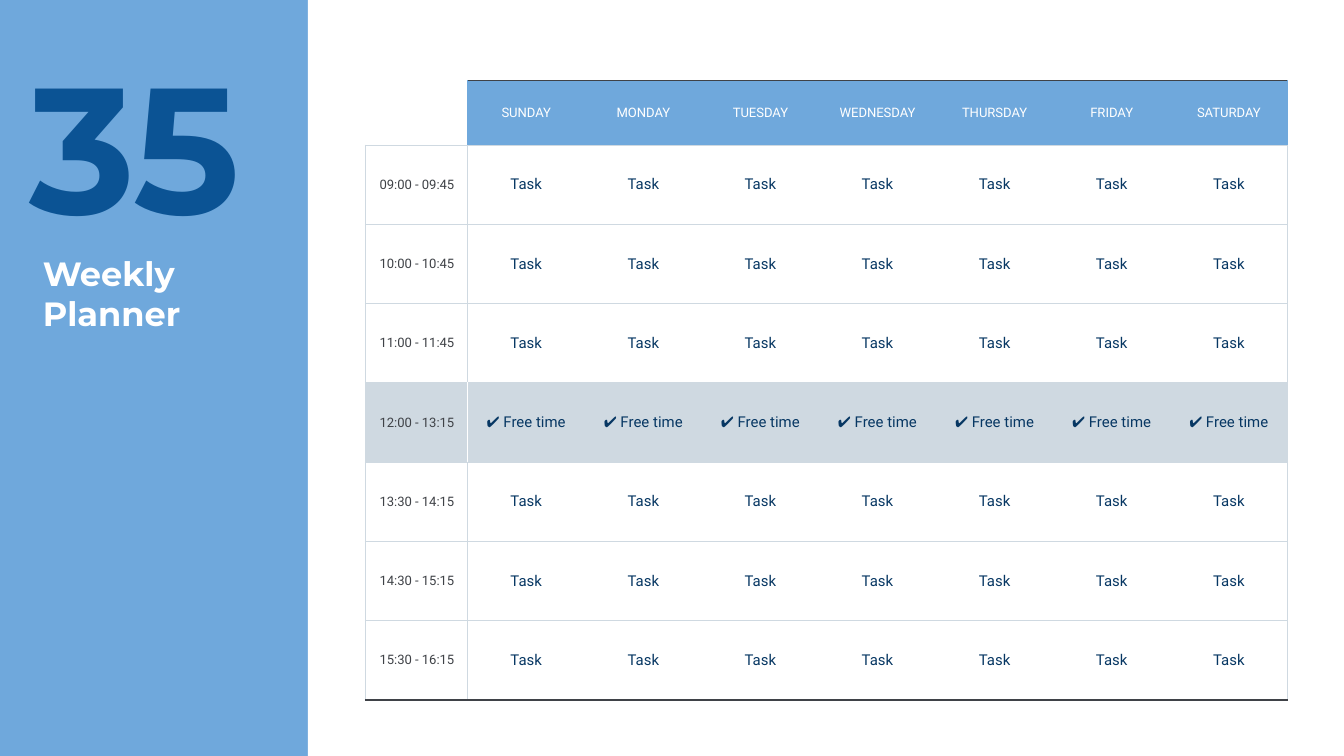
from dataclasses import dataclass

from lxml.etree import SubElement
from pptx import Presentation
from pptx.dml.color import RGBColor
from pptx.enum.shapes import MSO_SHAPE
from pptx.enum.text import MSO_ANCHOR, PP_ALIGN
from pptx.oxml.ns import qn
from pptx.util import Inches, Pt


@dataclass(frozen=True)
class Theme:
    sky: str = "6FA8DC"
    blue: str = "0B5394"
    navy: str = "073763"
    mist: str = "CFD9E1"
    charcoal: str = "3F4247"
    white: str = "FFFFFF"
    heading_font: str = "Montserrat"
    body_font: str = "Roboto"
    number_size: int = 96
    title_size: int = 18
    label_size: int = 7
    task_size: int = 8
    border_width: float = 0.75


THEME = Theme()
DAYS = ["SUNDAY", "MONDAY", "TUESDAY", "WEDNESDAY", "THURSDAY", "FRIDAY", "SATURDAY"]
TIMES = [
    "09:00 - 09:45",
    "10:00 - 10:45",
    "11:00 - 11:45",
    "12:00 - 13:15",
    "13:30 - 14:15",
    "14:30 - 15:15",
    "15:30 - 16:15",
]
BREAK_TIME = "12:00 - 13:15"
MARGIN = Inches(0.1)


def style_font(font, name, size, color, bold=False):
    font.name = name
    font.size = Pt(size)
    font.bold = bold
    font.color.rgb = RGBColor.from_string(color)


def add_panel(slide, left, width, height, color):
    shape = slide.shapes.add_shape(MSO_SHAPE.RECTANGLE, left, 0, width, height)
    shape.shadow.inherit = False
    shape.fill.solid()
    shape.fill.fore_color.rgb = RGBColor.from_string(color)
    shape.line.fill.background()


def add_heading(slide, text, left, top, width, height, size, color):
    frame = slide.shapes.add_textbox(left, top, width, height).text_frame
    frame.word_wrap = True
    frame.margin_left = frame.margin_right = MARGIN
    frame.margin_top = frame.margin_bottom = MARGIN
    paragraph = frame.paragraphs[0]
    paragraph.text = text
    style_font(paragraph.font, THEME.heading_font, size, color, bold=True)


def write_cell(cell, text, size, color, alignment=PP_ALIGN.CENTER):
    cell.text = text
    cell.vertical_anchor = MSO_ANCHOR.MIDDLE
    cell.margin_right = cell.margin_top = cell.margin_bottom = MARGIN
    cell.margin_left = Inches(0.05) if alignment == PP_ALIGN.RIGHT else MARGIN
    paragraph = cell.text_frame.paragraphs[0]
    paragraph.alignment = alignment
    style_font(paragraph.font, THEME.body_font, size, color)


def fill_cell(cell, color):
    if color is None:
        cell.fill.background()
    else:
        cell.fill.solid()
        cell.fill.fore_color.rgb = RGBColor.from_string(color)


def set_borders(cell, left=None, right=None, top=None, bottom=None):
    properties = cell._tc.get_or_add_tcPr()
    edges = [("a:lnL", left), ("a:lnR", right), ("a:lnT", top), ("a:lnB", bottom)]
    for position, (tag, color) in enumerate(edges):
        line = properties.makeelement(qn(tag), {"w": str(Pt(THEME.border_width))})
        properties.insert(position, line)
        if color is None:
            SubElement(line, qn("a:noFill"))
        else:
            fill = SubElement(line, qn("a:solidFill"))
            SubElement(fill, qn("a:srgbClr"), val=color)


def write_header(table):
    corner = table.cell(0, 0)
    fill_cell(corner, None)
    set_borders(corner, right=THEME.sky, bottom=THEME.mist)
    for column, day in enumerate(DAYS, 1):
        cell = table.cell(0, column)
        write_cell(cell, day, THEME.label_size, THEME.white)
        fill_cell(cell, THEME.sky)
        set_borders(
            cell,
            left=THEME.sky if column == 1 else None,
            right=THEME.sky if column == len(DAYS) else None,
            top=THEME.charcoal,
            bottom=THEME.mist,
        )


def write_time_row(table, row, time):
    is_break = time == BREAK_TIME
    background = THEME.mist if is_break else None
    divider = THEME.white if is_break else THEME.mist
    bottom = THEME.charcoal if row == len(TIMES) else THEME.mist
    label = table.cell(row, 0)
    write_cell(label, time, THEME.label_size, THEME.charcoal, PP_ALIGN.RIGHT)
    fill_cell(label, background)
    set_borders(label, THEME.mist, divider, THEME.mist, bottom)
    for column in range(1, len(DAYS) + 1):
        cell = table.cell(row, column)
        text = "✔ Free time" if is_break else "Task"
        write_cell(cell, text, THEME.task_size, THEME.navy)
        fill_cell(cell, background)
        set_borders(
            cell,
            left=divider if column == 1 else None,
            right=THEME.mist if column == len(DAYS) else None,
            top=THEME.mist,
            bottom=bottom,
        )


def add_planner(slide):
    time_width, days_width = Inches(0.76), Inches(6.1)
    header_height, row_height = Inches(0.48), Inches(0.59)
    table = slide.shapes.add_table(
        len(TIMES) + 1,
        len(DAYS) + 1,
        Inches(2.72),
        Inches(0.6),
        time_width + days_width,
        header_height + row_height * len(TIMES),
    ).table
    table.first_row = table.horz_banding = False
    for index, column in enumerate(table.columns):
        column.width = days_width // len(DAYS) if index else time_width
    for index, row in enumerate(table.rows):
        row.height = row_height if index else header_height
    write_header(table)
    for row, time in enumerate(TIMES, 1):
        write_time_row(table, row, time)


def main():
    presentation = Presentation()
    presentation.slide_width = Inches(10)
    presentation.slide_height = Inches(10) * 9 // 16
    slide = presentation.slides.add_slide(presentation.slide_layouts[6])
    slide.background.fill.solid()
    slide.background.fill.fore_color.rgb = RGBColor.from_string(THEME.sky)
    add_panel(slide, Inches(2.29), Inches(7.71), presentation.slide_height, THEME.white)
    add_heading(slide, "Weekly Planner", Inches(0.22), Inches(1.78), Inches(1.87),
                Inches(0.94), THEME.title_size, THEME.white)
    add_heading(slide, "35", Inches(0.12), Inches(0.16), Inches(1.98),
                Inches(1.37), THEME.number_size, THEME.blue)
    add_planner(slide)
    presentation.save("out.pptx")


if __name__ == "__main__":
    main()
